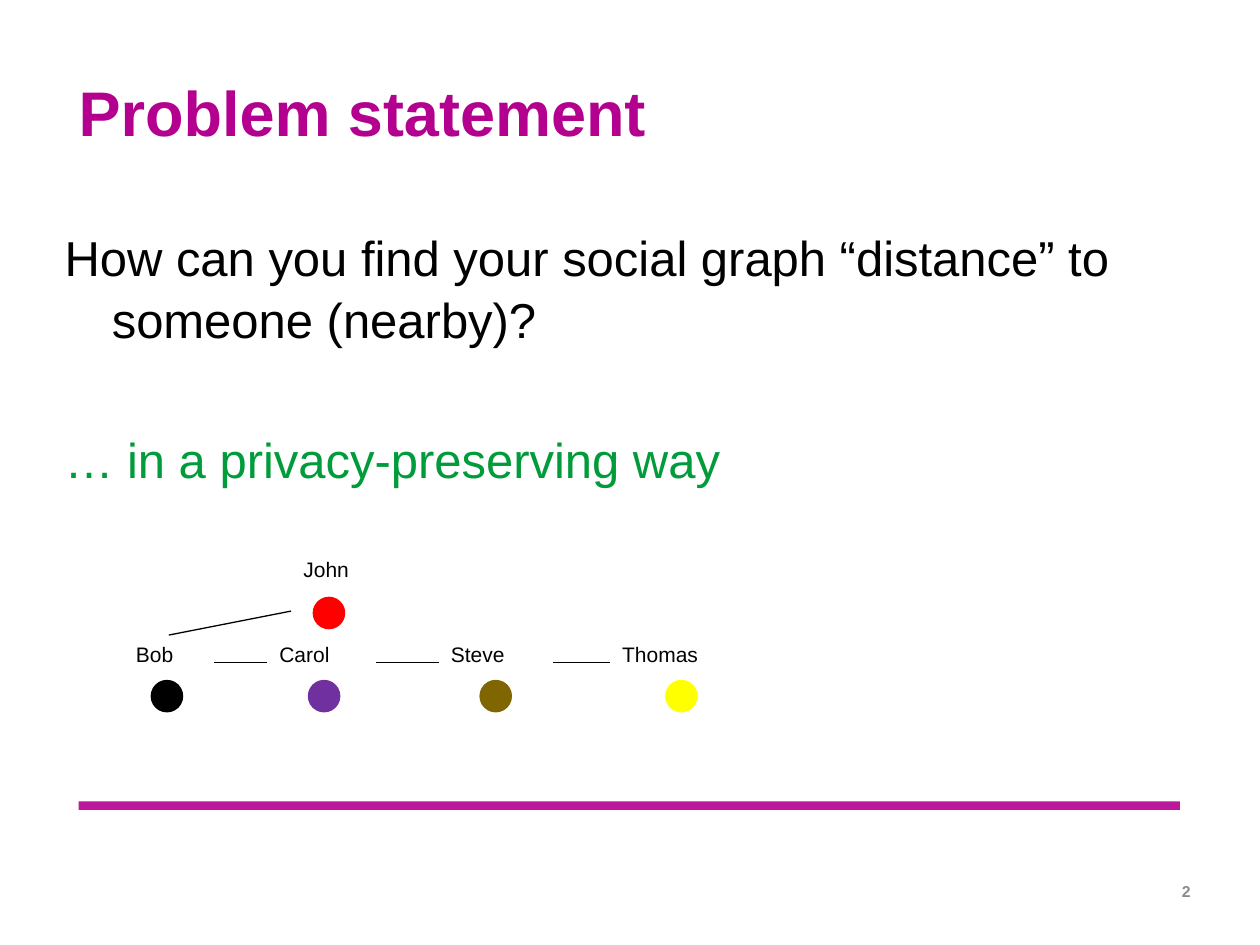
from dataclasses import dataclass

from lxml import etree
from pptx import Presentation
from pptx.dml.color import RGBColor
from pptx.enum.shapes import MSO_CONNECTOR, MSO_SHAPE
from pptx.enum.text import MSO_ANCHOR, PP_ALIGN
from pptx.oxml.ns import qn
from pptx.util import Pt

OVAL, RECT = MSO_SHAPE.OVAL, MSO_SHAPE.RECTANGLE
LINE = MSO_CONNECTOR.STRAIGHT
TOP, MID = MSO_ANCHOR.TOP, MSO_ANCHOR.MIDDLE
LEFT, RIGHT = PP_ALIGN.LEFT, PP_ALIGN.RIGHT
PINK, GREEN, GREY, BLACK = "B4008F", "009B3A", "8C8C8C", "000000"
DOT = 16.6


@dataclass
class Friend:
    name: str
    left: float
    top: float
    width: float
    dot_x: float
    dot_y: float
    tint: str


@dataclass
class Para:
    text: str
    size: float
    tint: str
    bold: bool = False
    before: float = 0
    format: dict | None = None


def color(code: str) -> RGBColor:
    return RGBColor.from_string(code)


def put(item, values: dict) -> None:
    for key, value in values.items():
        setattr(item, key, value)


def add_text(slide, box: tuple, paras: list[Para], inset: tuple = (0, 0),
             anchor=TOP) -> None:
    frame = slide.shapes.add_textbox(*map(Pt, box)).text_frame
    side, edge = map(Pt, inset)
    put(frame, {"word_wrap": True, "vertical_anchor": anchor,
                "margin_left": side, "margin_right": side,
                "margin_top": edge, "margin_bottom": edge})
    for index, para in enumerate(paras):
        line = frame.add_paragraph() if index else frame.paragraphs[0]
        line.text = para.text
        put(line, {"alignment": LEFT, **(para.format or {})})
        if para.before:
            line.space_before = Pt(para.before)
        font = line.runs[0].font
        put(font, {"name": "Arial", "size": Pt(para.size), "bold": para.bold})
        font.color.rgb = color(para.tint)


def add_form(slide, kind, box: tuple, tint: str, edge: float = 0):
    form = slide.shapes.add_shape(kind, *map(Pt, box))
    form.shadow.inherit = False
    form.fill.solid()
    form.fill.fore_color.rgb = color(tint)
    if edge:
        form.line.color.rgb = color(tint)
        form.line.width = Pt(edge)
    else:
        form.line.fill.background()
    return form


def add_link(slide, ends: tuple) -> None:
    link = slide.shapes.add_connector(LINE, *map(Pt, ends))
    link.line.color.rgb = color(BLACK)
    link.line.width = Pt(0.75)
    etree.SubElement(link._element.spPr, qn("a:effectLst"))


def add_friend(slide, friend: Friend) -> None:
    add_text(slide, (friend.left, friend.top, friend.width, 31.7),
             [Para(friend.name, 12, BLACK)], (7.2, 3.6))
    add_form(slide, OVAL, (friend.dot_x, friend.dot_y, DOT, DOT),
             friend.tint, 2)


def main() -> None:
    deck = Presentation()
    put(deck, {"slide_width": Pt(720), "slide_height": Pt(540)})
    slide = deck.slides.add_slide(deck.slide_layouts[6])

    bar = add_form(slide, RECT, (45, 457.9, 629.3, 5), PINK)
    tone = bar.fill._xPr.find(".//" + qn("a:srgbClr"))
    etree.SubElement(tone, qn("a:alpha"), val="90000")

    add_text(slide, (558.7, 504, 121.7, 10),
             [Para("2", 9, GREY, True, format={"alignment": RIGHT})],
             anchor=MID)
    add_text(slide, (45, 38.9, 629.3, 85),
             [Para("Problem statement", 36, PINK, True,
                   format={"line_spacing": 1.07})])

    form = {"line_spacing": 1.05}
    body = [
        Para("How can you find your social graph “distance” to "
             "someone (nearby)?", 28, BLACK, format=form),
        Para("… in a privacy-preserving way", 28, GREEN, before=45,
             format=form),
    ]
    add_body(slide, body)

    row, dots = 362.9, 389.5
    chain = [
        Friend("Bob", 70.6, row, 51.8, 87.1, dots, BLACK),
        Friend("Carol", 152.6, row, 62.2, 176.9, dots, "7030A0"),
        Friend("Steve", 250.6, row, 65.5, 275, dots, "7F6600"),
        Friend("Thomas", 348.5, row, 83.5, 381.1, dots, "FFFF00"),
    ]
    john = Friend("John", 166.3, 314.6, 58.3, 179.7, 342, "FF0000")
    for friend in [john, *chain]:
        add_friend(slide, friend)

    mid = row + 15.8
    for one, two in zip(chain, chain[1:]):
        add_link(slide, (one.left + one.width, mid, two.left, mid))
    add_link(slide, (96.5, row, john.left, 349.2))
    deck.save("out.pptx")


def add_body(slide, paras: list[Para]) -> None:
    add_text(slide, (36.9, 128.2, 648, 356.4), paras)
    frame = slide.shapes[-1].text_frame
    for line in frame.paragraphs:
        props = line._p.get_or_add_pPr()
        props.set("marL", str(Pt(27)))
        props.set("indent", str(-Pt(27)))


if __name__ == "__main__":
    main()
